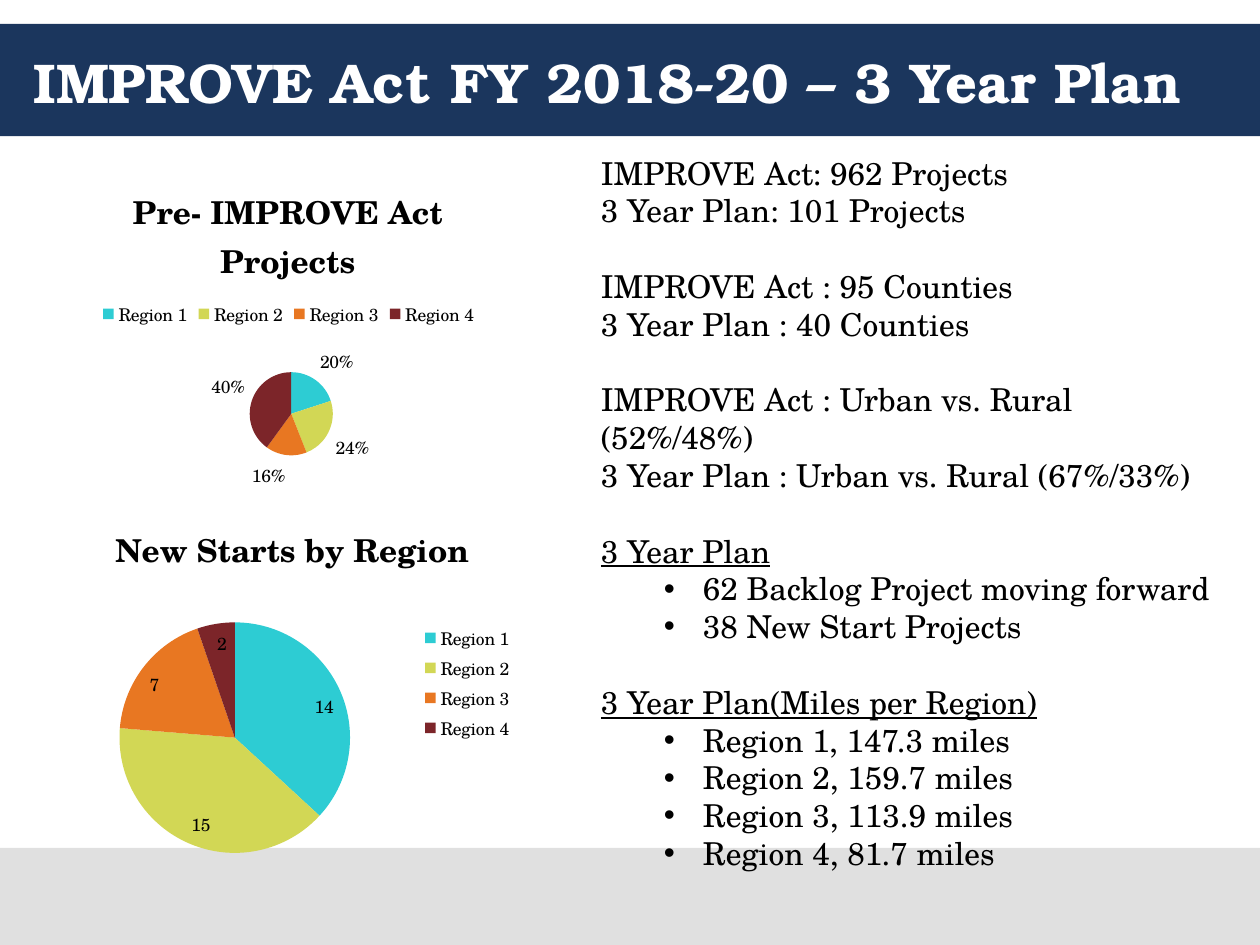
from lxml import etree
from pptx import Presentation
from pptx.chart.data import CategoryChartData as ChartData
from pptx.dml.color import RGBColor
from pptx.enum.chart import XL_CHART_TYPE as Kind, XL_LABEL_POSITION as Spot, XL_LEGEND_POSITION as Side
from pptx.enum.shapes import MSO_SHAPE as Shape
from pptx.enum.text import MSO_ANCHOR as Anchor
from pptx.oxml import parse_xml
from pptx.oxml.ns import nsdecls, qn
from pptx.util import Inches, Pt

COLORS = {"navy": "1B365D", "gray": "E0E0E0", "white": "FFFFFF", "black": "000000",
          "teal": "2DCCD3", "lime": "D2D755", "orange": "E87722", "maroon": "7C2529"}
SLICES = ["teal", "lime", "orange", "maroon"]
REGIONS = [f"Region {n}" for n in range(1, 5)]
HEAD, BODY = "TeX Gyre Bonum", "TeX Gyre Schola"

GROUPS = [
    (["IMPROVE Act: 962 Projects", "3 Year Plan: 101 Projects"], []),
    (["IMPROVE Act : 95 Counties", "3 Year Plan : 40 Counties"], []),
    (["IMPROVE Act : Urban vs. Rural (52%/48%)", "3 Year Plan : Urban vs. Rural (67%/33%)"], []),
    (["3 Year Plan"], ["62 Backlog Project moving forward", "38 New Start Projects"]),
    (["3 Year Plan(Miles per Region)"],
     ["Region 1, 147.3 miles", "Region 2, 159.7 miles", "Region 3, 113.9 miles", "Region 4, 81.7 miles"]),
]
PIES = [
    {"box": (0.42, 3.92, 3.75, 3), "title": "New Starts by Region", "values": (14, 15, 7, 2),
     "side": Side.RIGHT, "spot": Spot.INSIDE_END, "percent": False,
     "head": (0.12, 0.06), "plot": (0.14, 0.34, 0.49, 0.61)},
    {"box": (0.08, 1.25, 4.42, 2.75), "title": "Pre- IMPROVE Act Projects", "values": (20, 24, 16, 40),
     "side": Side.TOP, "spot": Spot.OUTSIDE_END, "percent": True,
     "head": (0.21, 0.06), "plot": (0.43, 0.62, 0.15, 0.24)},
]


def rgb(name):
    """Return the named colour."""
    return RGBColor.from_string(COLORS[name])


def style(font, color="black", **form):
    """Set the colour and the format values of a font."""
    font.color.rgb = rgb(color)
    for key, value in form.items():
        setattr(font, key, value)


def band(slide, box, color):
    """Draw a plain coloured band."""
    shape = slide.shapes.add_shape(Shape.RECTANGLE, *map(Inches, box))
    shape.shadow.inherit = False
    shape.fill.solid()
    shape.fill.fore_color.rgb = rgb(color)
    shape.line.fill.background()


def text_box(slide, box):
    """Add a wrapping text box and return its frame."""
    frame = slide.shapes.add_textbox(*map(Inches, box)).text_frame
    frame.word_wrap = True
    return frame


def heading(slide, box, text):
    """Write the slide title."""
    frame = text_box(slide, box)
    frame.vertical_anchor = Anchor.MIDDLE
    para = frame.paragraphs[0]
    para.text = text
    style(para.font, "white", name=HEAD, size=Pt(32), bold=True)


def bullet(para):
    """Give a paragraph a hanging bullet."""
    props = para._p.get_or_add_pPr()
    for key, value in {"marL": 0.81, "indent": -0.31, "lvl": None}.items():
        props.set(key, "1" if value is None else str(Inches(value)))
    etree.SubElement(props, qn("a:buFont"), typeface="Arial")
    etree.SubElement(props, qn("a:buChar"), char="•")


def facts(slide, box, groups):
    """Write the groups of facts with a blank line's space between them."""
    frame = text_box(slide, box)
    para = frame.paragraphs[0]
    for count, (lines, items) in enumerate(groups):
        for row, text in enumerate(lines + items):
            if count or row:
                para = frame.add_paragraph()
            if count and not row:
                para.space_before = Pt(21.6)
            if row >= len(lines):
                bullet(para)
            para.text = text
            style(para.font, name=BODY, size=Pt(18), underline=bool(items) and row < len(lines))


def layout(place, inner=False):
    """Return a manual chart layout from fractions of the chart."""
    keys = ["xMode", "yMode", *"xywh"[:len(place)]]
    parts = "".join(f'<c:{key} val="{value}"/>' for key, value in zip(keys, ("edge", "edge", *place)))
    target = '<c:layoutTarget val="inner"/>' if inner else ""
    return parse_xml(f'<c:layout {nsdecls("c")}><c:manualLayout>{target}{parts}</c:manualLayout></c:layout>')


def pie(slide, box, title, values, side, spot, percent, head, plot):
    """Draw a pie of the four regions with its title and legend."""
    data = ChartData()
    data.categories = REGIONS
    data.add_series("Series 1", values)
    chart = slide.shapes.add_chart(Kind.PIE, *map(Inches, box), data).chart
    style(chart.font, name=BODY, size=Pt(10))

    frame = chart.chart_title.text_frame
    frame.text = title
    style(frame.paragraphs[0].runs[0].font, name=BODY, size=Pt(18), bold=True)
    chart.chart_title.include_in_layout = False
    top = chart.chart_title._element
    for old in top.findall(qn("c:layout")):
        top.remove(old)
    top.find(qn("c:tx")).addnext(layout(head))
    area = chart._chartSpace.chart.plotArea
    for old in area.findall(qn("c:layout")):
        area.remove(old)
    area.insert(0, layout(plot, True))

    chart.has_legend = True
    chart.legend.position = side
    chart.legend.include_in_layout = False
    chart.plots[0].vary_by_categories = True
    series = chart.plots[0].series[0]
    for count, color in enumerate(SLICES):
        fill = series.points[count].format.fill
        fill.solid()
        fill.fore_color.rgb = rgb(color)
    form = {"show_value": not percent, "show_percentage": percent, "position": spot,
            "number_format": "0%" if percent else "0", "number_format_is_linked": False}
    for key, value in form.items():
        setattr(series.data_labels, key, value)
    style(series.data_labels.font, name=BODY, size=Pt(10))


def main():
    """Build the slide and save it."""
    deck = Presentation()
    deck.slide_width, deck.slide_height = Inches(10), Inches(7.5)
    slide = deck.slides.add_slide(deck.slide_layouts[6])
    band(slide, (0, 0.19, 10, 0.89), "navy")
    band(slide, (0, 6.73, 10, 0.77), "gray")
    heading(slide, (0.17, 0.19, 9.67, 0.9), "IMPROVE Act FY 2018-20 – 3 Year Plan")
    facts(slide, (4.67, 1.17, 5.17, 6.16), GROUPS)
    for part in PIES:
        pie(slide, **part)
    deck.save("out.pptx")


if __name__ == "__main__":
    main()
